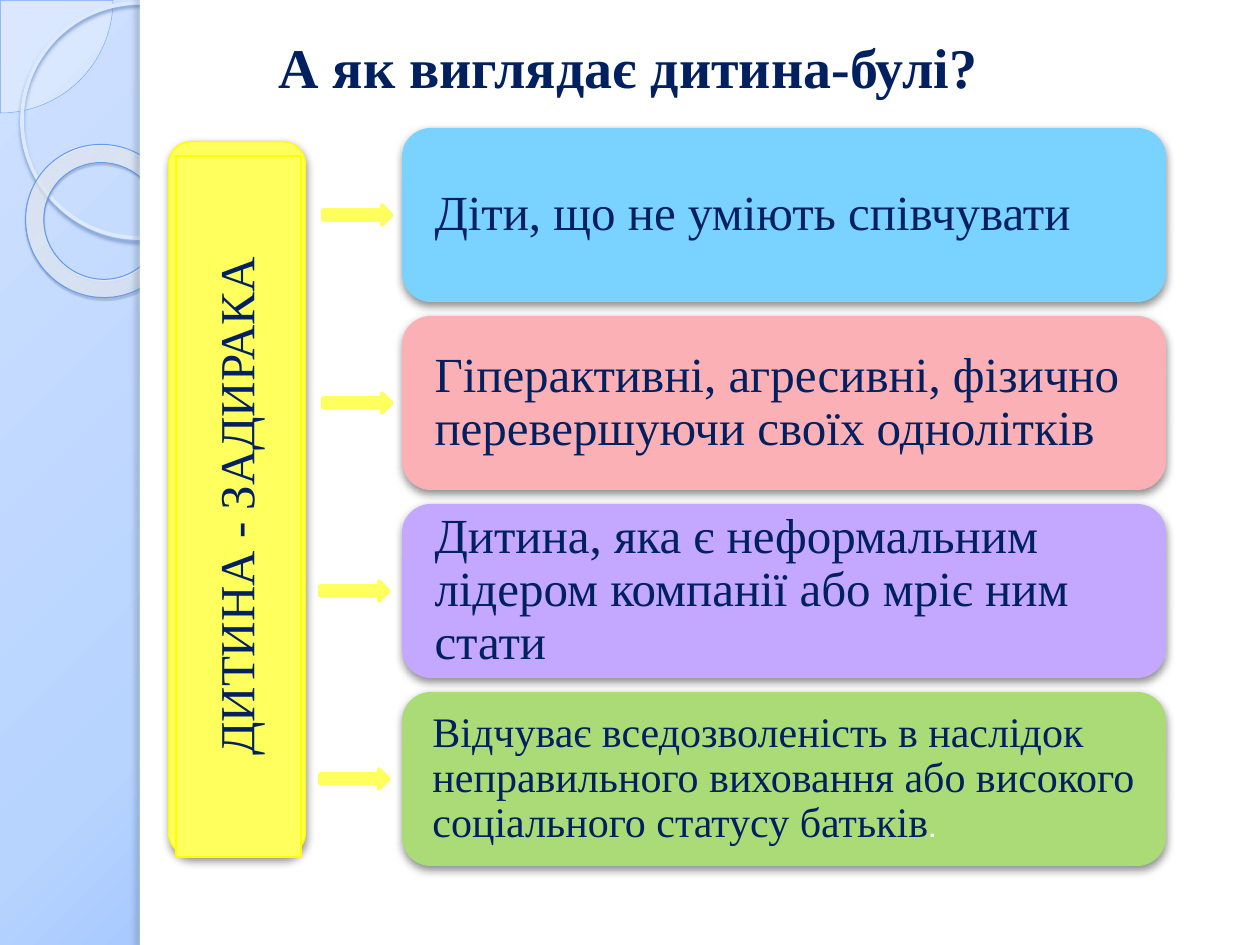
from lxml import etree
from pptx import Presentation
from pptx.dml.color import RGBColor
from pptx.enum.shapes import MSO_SHAPE
from pptx.enum.text import MSO_ANCHOR, MSO_AUTO_SIZE, PP_ALIGN
from pptx.oxml.ns import qn
from pptx.util import Emu, Pt

RECT, ROUND = MSO_SHAPE.RECTANGLE, MSO_SHAPE.ROUNDED_RECTANGLE
OVAL, DONUT, PIE = MSO_SHAPE.OVAL, MSO_SHAPE.DONUT, MSO_SHAPE.PIE
ARROW = MSO_SHAPE.RIGHT_ARROW
LEFT, CENTER, JUSTIFY = PP_ALIGN.LEFT, PP_ALIGN.CENTER, PP_ALIGN.JUSTIFY
MIDDLE = MSO_ANCHOR.MIDDLE
EMU_PER_PX = 914400 / 126
FONT = "Times New Roman"

COLORS = {
    "white": "FFFFFF", "black": "000000", "navy": "002060",
    "yellow": "FFFF5D", "edge": "FFFF00",
    "sky": "79D2FF", "pink": "FAB0B5", "violet": "C4A7FF", "green": "ABDB77",
    "pie": "F2F6FF", "pie_line": "72A7F6",
    "ring": "DCE9FF", "ring_shadow": "7193C6",
    "donut_line": "659BEC", "donut_shadow": "31486A", "panel_shadow": "54647E",
    "bg_light": "CFE1FF", "bg_mid": "B7D3FF", "bg_deep": "4991FB",
    "donut_a": "F5F9FF", "donut_b": "FBFCFF", "donut_c": "75ACFF",
}
# colour, opacity %, blur pt, distance pt, direction in degrees
SOFT = ("black", 43, 5, 2, 90)


def px(n):
    return Emu(round(n * EMU_PER_PX))


def rgb(name):
    return RGBColor.from_string(COLORS[name])


def add(parent, tag, **attrs):
    el = etree.SubElement(parent, qn(tag))
    for key, value in attrs.items():
        el.set(key, str(value))
    return el


def add_color(parent, name, alpha=100):
    el = add(parent, "a:srgbClr", val=COLORS[name])
    if alpha < 100:
        add(el, "a:alpha", val=alpha * 1000)


def radial(fill, root, stops, rect):
    """Make a gradient fill circular; stops are (position, colour, opacity)."""
    fill.gradient()
    grad = root.find(".//" + qn("a:gradFill"))
    for child in list(grad):
        grad.remove(child)
    gs_list = add(grad, "a:gsLst")
    for pos, name, alpha in stops:
        add_color(add(gs_list, "a:gs", pos=pos * 1000), name, alpha)
    circle = add(grad, "a:path", path="circle")
    add(circle, "a:fillToRect", **{k: v * 1000 for k, v in zip("ltrb", rect)})


class Deck:
    def __init__(self, width, height):
        self.prs = Presentation()
        self.prs.slide_width, self.prs.slide_height = px(width), px(height)
        self.s = self.prs.slides.add_slide(self.prs.slide_layouts[6])

    def background(self, stops, rect):
        radial(self.s.background.fill, self.s._element, stops, rect)

    def shape(self, kind, box, fill=None, line=None, alpha=100, shadow=None,
              rotation=0, adj=()):
        sp = self.s.shapes.add_shape(kind, *map(px, box))
        sp.rotation = rotation
        for i, value in enumerate(adj):
            sp.adjustments[i] = value
        if fill:
            sp.fill.solid()
            sp.fill.fore_color.rgb = rgb(fill)
            if alpha < 100:
                clr = sp._element.spPr.find(".//" + qn("a:srgbClr"))
                add(clr, "a:alpha", val=alpha * 1000)
        else:
            sp.fill.background()
        if line:
            sp.line.color.rgb = rgb(line[0])
            sp.line.width = Pt(line[1])
        else:
            sp.line.fill.background()
        sp.shadow.inherit = False
        if shadow:
            name, opacity, blur, dist, angle = shadow
            effects = sp._element.spPr.find(qn("a:effectLst"))
            outer = add(effects, "a:outerShdw", blurRad=Pt(blur), dist=Pt(dist),
                        dir=angle * 60000, algn="ctr", rotWithShape=0)
            add_color(outer, name, opacity)
        return sp

    def text(self, sp, runs, align=LEFT, spacing=0.9, **frame):
        """Fill a shape with one paragraph; runs are (text, font format)."""
        tf = sp.text_frame
        for key, value in frame.items():
            setattr(tf, key, value)
        p = tf.paragraphs[0]
        p.alignment, p.line_spacing = align, spacing
        for content, fmt in runs:
            r = p.add_run()
            r.text = content
            fmt = {"name": FONT, "color": "navy", **fmt}
            r.font.color.rgb = rgb(fmt.pop("color"))
            for key, value in fmt.items():
                setattr(r.font, key, value)

    def textbox(self, box, runs, **frame):
        self.text(self.s.shapes.add_textbox(*map(px, box)), runs, **frame)


def insets(side, top):
    return {"margin_left": px(side), "margin_right": px(side),
            "margin_top": px(top), "margin_bottom": px(top),
            "vertical_anchor": MIDDLE, "word_wrap": True}


def main():
    deck = Deck(1260, 945)

    # Side decoration and white panel
    deck.background([(0, "bg_light", 100), (40, "bg_mid", 100), (100, "bg_deep", 100)],
                    (-24, -20, 124, 120))
    deck.shape(PIE, (-112, -112, 225, 225), "pie", ("pie_line", 0.25), alpha=33,
               adj=(0, 54.02))
    deck.shape(OVAL, (22, 3, 235, 235), line=("ring", 2.15),
               shadow=("ring_shadow", 85, 2, 2, 90))
    donut = deck.shape(DONUT, (25, 145, 155, 152), line=("donut_line", 0.58),
                       shadow=("donut_shadow", 35, 1, 1.2, 75),
                       rotation=38.6, adj=(0.12,))
    radial(donut.fill, donut._element.spPr,
           [(0, "donut_a", 70), (70, "donut_b", 55), (100, "donut_c", 60)],
           (-408, -50, 508, 150))
    deck.shape(RECT, (140, 0, 1120, 945), "white")
    deck.shape(RECT, (140, 0, 10, 945), "white",
               shadow=("panel_shadow", 25, 3, 3, 180))

    # Title
    deck.textbox((266, 16, 732, 86),
                 [("А як виглядає дитина-булі?", {"size": Pt(32), "bold": True})],
                 align=JUSTIFY, spacing=1.15, word_wrap=False,
                 auto_size=MSO_AUTO_SIZE.SHAPE_TO_FIT_TEXT)

    # Trait cards, each with its arrow
    big, small = {"size": Pt(28)}, {"size": Pt(24)}
    dot = {"size": Pt(22), "name": "Cabin", "color": "white"}
    cards = [
        ("sky", 323, 24, [("Діти, що не уміють співчувати", big)]),
        ("pink", 323, 24, [("Гіперактивні, агресивні, фізично перевершуючи "
                            "своїх однолітків", big)]),
        ("violet", 320, 24, [("Дитина, яка є неформальним лідером компанії "
                              "або мріє ним стати", big)]),
        ("green", 320, 22, [("Відчуває вседозволеність в наслідок неправильного "
                             "виховання або високого соціального статусу батьків",
                             small), (".", dot)]),
    ]
    pitch = 188
    for i, (color, arrow_left, side, runs) in enumerate(cards):
        card = deck.shape(ROUND, (402, 128 + i * pitch, 764, 174), color, shadow=SOFT)
        deck.text(card, runs, **insets(side, 0))
        deck.shape(ARROW, (arrow_left, 205 + i * pitch, 69, 20), "yellow",
                   ("yellow", 2))

    # Vertical label
    edge = ("edge", 0.75)
    deck.shape(ROUND, (-120, 430, 714, 137), "yellow", edge, shadow=SOFT, rotation=270)
    label = deck.shape(RECT, (-112, 444, 701, 125), "yellow", edge, rotation=270)
    deck.text(label, [("ДИТИНА - ЗАДИРАКА", big)], align=CENTER, **insets(13, 13))

    deck.prs.save("out.pptx")


if __name__ == "__main__":
    main()
